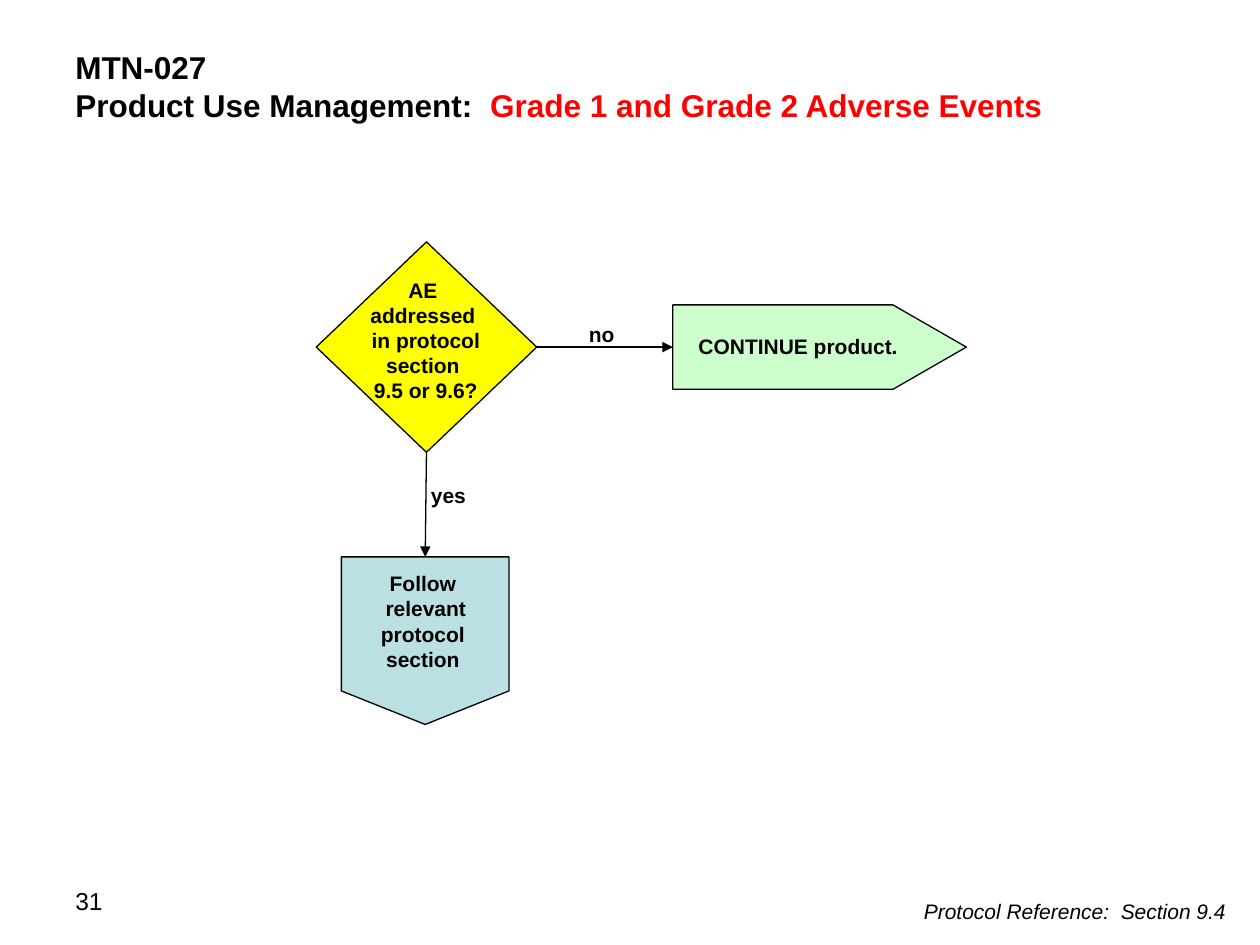
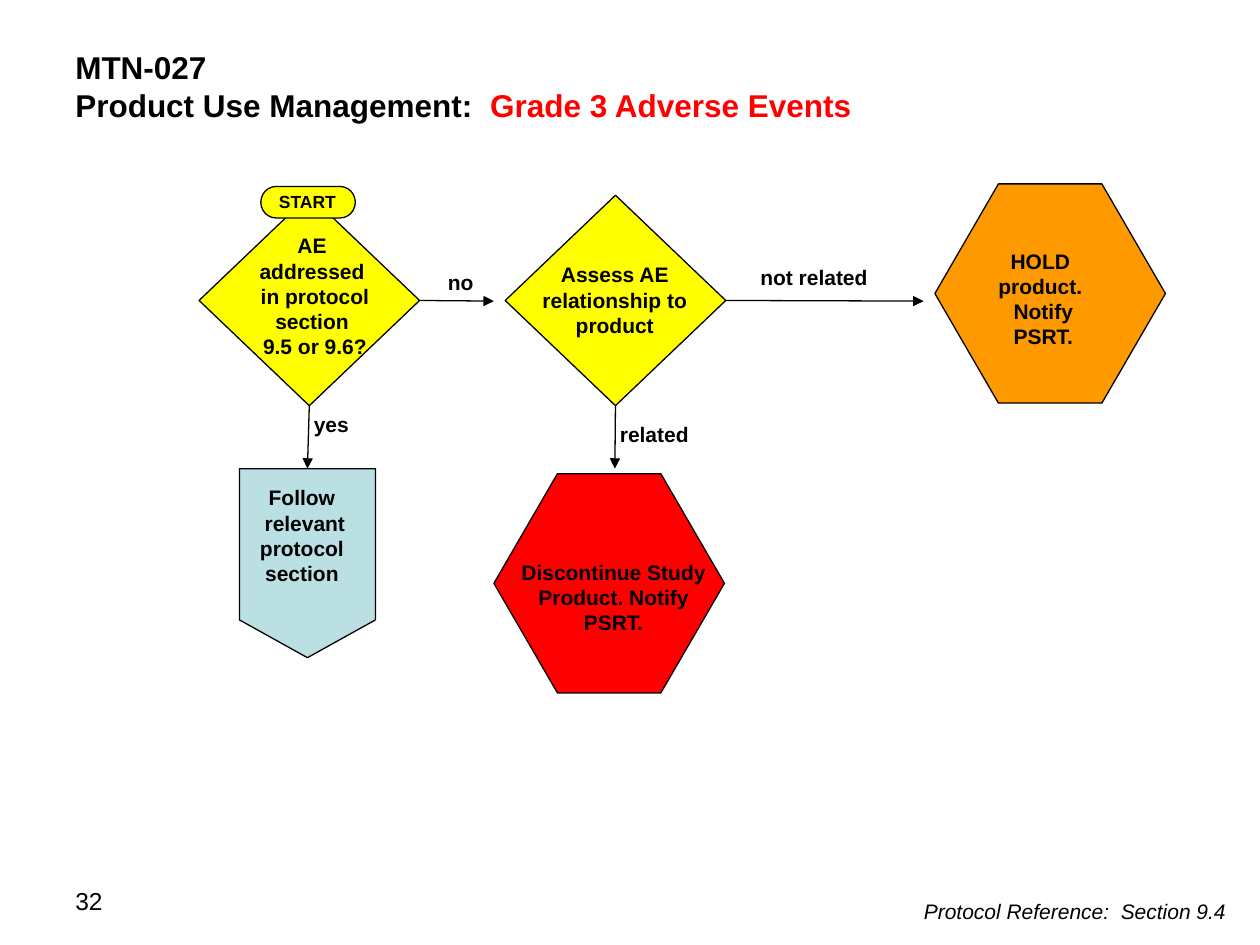
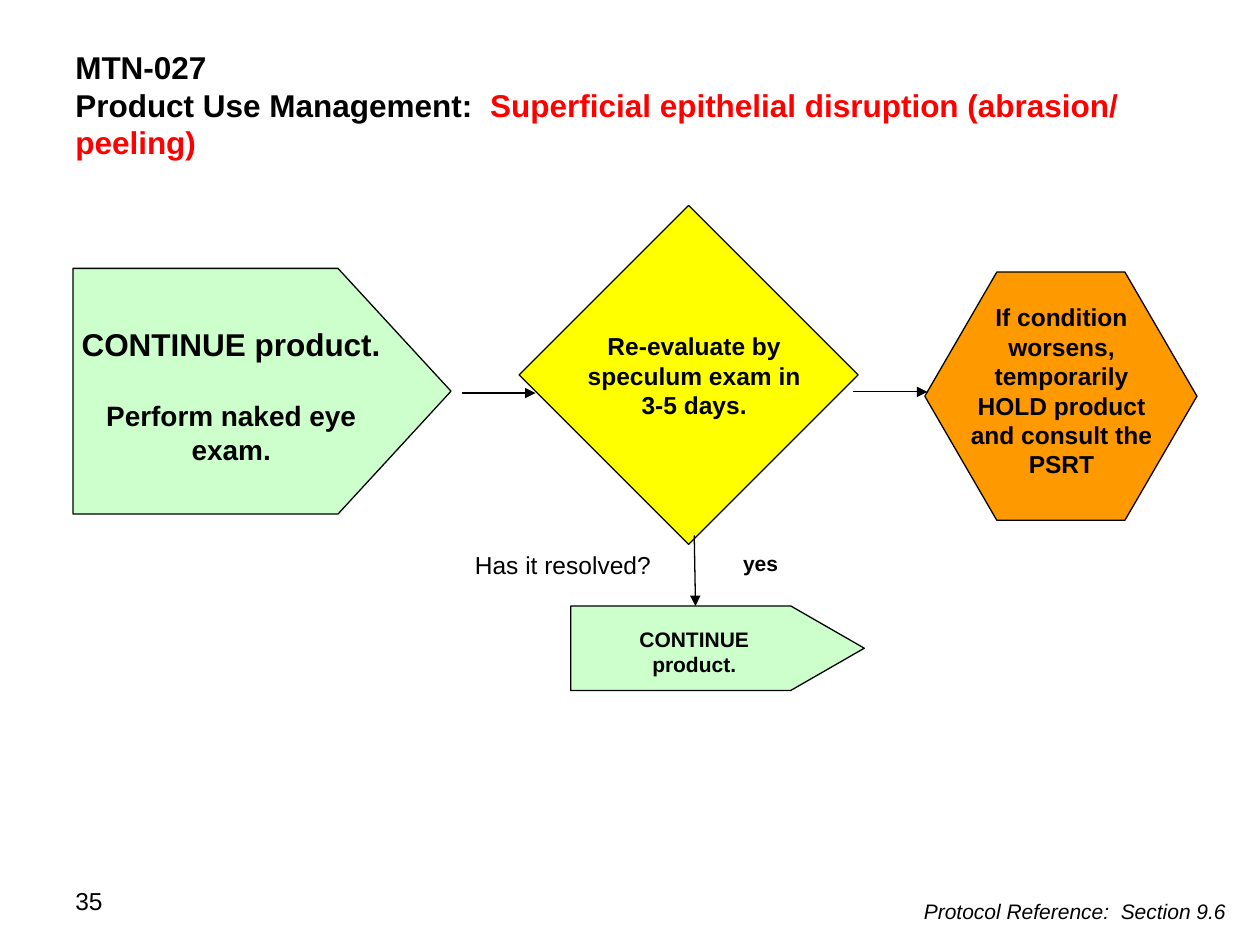
"""Builds three flow chart slides on study product use management."""
import pptx
import pptx.dml.color
import pptx.enum.shapes
import pptx.enum.text
import pptx.oxml
import pptx.oxml.ns
import pptx.util

Inches = pptx.util.Inches
Pt = pptx.util.Pt
MSO = pptx.enum.shapes.MSO_SHAPE
ALIGN = pptx.enum.text.PP_ALIGN

BLACK, RED = "000000", "FF0000"
TOP, LEFT, BOTTOM, RIGHT = range(4)

KINDS = {
    "ask": (MSO.DIAMOND, "FFFF00", None),
    "start": (MSO.FLOWCHART_TERMINATOR, "FFFF00", None),
    "go": (MSO.PENTAGON, "CCFFCC", 0.87),
    "go big": (MSO.PENTAGON, "CCFFCC", 0.46),
    "follow": (MSO.FLOWCHART_OFFPAGE_CONNECTOR, "BBE0E3", None),
    "hold": (MSO.HEXAGON, "FF9900", 0.29),
    "stop": (MSO.HEXAGON, RED, 0.29),
}

BODY = {"size": Pt(12), "bold": True}
MID = {"size": Pt(14), "bold": True}
BIG = {"size": Pt(18), "bold": True}
SMALL = {"size": Pt(10), "bold": True}
PLAIN = {"size": Pt(14)}
NOTE = {"size": Pt(12), "italic": True}

SIDE = {"margin_left": 0}
LOOSE = {"word_wrap": False}

ADDRESSED = ["AE ", "addressed ", "in protocol section ", "9.5 or 9.6?"]
FOLLOW = ["Follow ", "relevant protocol ", "section "]

SLIDES = [
    {
        "page": "31", "section": "9.4",
        "topic": "Grade 1 and Grade 2 Adverse Events",
        "shapes": {
            "addressed": ("ask", 2.51, 1.92, 1.75, 1.67),
            "continue": ("go", 5.34, 2.42, 2.33, 0.67),
            "section": ("follow", 2.71, 4.42, 1.33, 1.33),
        },
        "arrows": [
            (("addressed", RIGHT), ("continue", LEFT)),
            (("addressed", BOTTOM), ("section", TOP)),
        ],
        "texts": [
            ((4.29, 2.5, 0.97, 0.3), ["no"], BODY, ALIGN.CENTER, {}),
            ((5.25, 2.6, 2.17, 0.3), ["CONTINUE product."], BODY, ALIGN.CENTER, {}),
            ((2.63, 2.15, 1.5, 1.11), ADDRESSED, BODY, ALIGN.CENTER, {}),
            ((3.42, 3.78, 2.83, 0.3), ["yes"], BODY, ALIGN.LEFT, SIDE),
            ((2.63, 4.48, 1.5, 0.91), FOLLOW, BODY, ALIGN.CENTER, {}),
        ],
    },
    {
        "page": "32", "section": "9.4",
        "topic": "Grade 3 Adverse Events",
        "shapes": {
            "hold": ("hold", 7.42, 1.46, 1.83, 1.74),
            "stop": ("stop", 3.92, 3.76, 1.83, 1.74),
            "addressed": ("ask", 1.58, 1.55, 1.75, 1.67),
            "section": ("follow", 1.9, 3.72, 1.08, 1.5),
            "assess": ("ask", 4.01, 1.55, 1.75, 1.67),
            "start": ("start", 2.07, 1.48, 0.75, 0.25),
        },
        "arrows": [
            (("addressed", BOTTOM), ("section", TOP)),
            (("addressed", RIGHT), (3.92, 2.39)),
            (("assess", RIGHT), (7.33, 2.39)),
            (("assess", BOTTOM), (4.88, 3.72)),
        ],
        "texts": [
            ((4.01, 4.39, 1.72, 0.71), ["Discontinue Study Product. Notify PSRT."],
             BODY, ALIGN.CENTER, {}),
            ((1.75, 1.8, 1.5, 1.11), ADDRESSED, BODY, ALIGN.CENTER, {}),
            ((2.49, 3.22, 0.58, 0.3), ["yes"], BODY, ALIGN.LEFT, SIDE),
            ((1.67, 3.8, 1.5, 0.91), FOLLOW, BODY, ALIGN.CENTER, {}),
            ((4.13, 2.03, 1.5, 0.7), ["Assess AE relationship to product"],
             BODY, ALIGN.CENTER, {}),
            ((3.33, 2.09, 0.75, 0.3), ["no"], BODY, ALIGN.CENTER, SIDE),
            ((5.67, 2.05, 1.58, 0.3), ["not related"], BODY, ALIGN.CENTER, {}),
            ((4.92, 3.3, 0.67, 0.3), ["related"], BODY, ALIGN.LEFT, SIDE),
            ((2.11, 1.47, 0.66, 0.27), ["START"], SMALL, ALIGN.CENTER, {}),
            ((7.42, 1.92, 1.72, 0.91), ["HOLD ", "product. ", "Notify", "PSRT."],
             BODY, ALIGN.CENTER, {}),
        ],
    },
    {
        "page": "35", "section": "9.6",
        "topic": "Superficial epithelial disruption (abrasion/ peeling)",
        "shapes": {
            "exam": ("go big", 0.58, 2.13, 3, 1.95),
            "hold": ("hold", 7.34, 2.16, 2.16, 1.97),
            "check": ("ask", 4.12, 1.63, 2.69, 2.69),
            "continue": ("go", 4.53, 4.81, 2.33, 0.67),
        },
        "arrows": [
            ((3.67, 3.12), (4.25, 3.12)),
            ((6.77, 3.11), (7.36, 3.11)),
            ((5.51, 4.25), (5.52, 4.81)),
        ],
        "texts": [
            ((0.5, 2.53, 2.67, 1.25),
             ["CONTINUE product.",
              ("Perform naked eye exam.", {"size": Pt(16)}, {"space_before": Pt(20.7)})],
             BIG, ALIGN.CENTER, {}),
            ((7.55, 2.35, 1.75, 1.51),
             ["If condition worsens, temporarily HOLD product and consult the PSRT"],
             MID, ALIGN.CENTER, {}),
            ((4.53, 2.58, 1.96, 1.04), ["Re-evaluate by speculum exam in 3-5 days."],
             MID, ALIGN.CENTER, {}),
            ((5.71, 4.32, 0.75, 0.3), ["yes"], BODY, ALIGN.CENTER, SIDE),
            ((4.65, 4.92, 1.72, 0.51), ["CONTINUE", "product."], BODY, ALIGN.CENTER, {}),
            ((3.67, 4.32, 1.61, 0.34), ["Has it resolved?"], PLAIN, ALIGN.LEFT, LOOSE),
        ],
    },
]


def apply(thing, form):
    for key, val in form.items():
        setattr(thing, key, val)


def paint(part, hue):
    part.rgb = pptx.dml.color.RGBColor.from_string(hue)


def add_run(para, text, font, hue=BLACK):
    run = para.add_run()
    run.text = text
    apply(run.font, {"name": "Arial", **font})
    paint(run.font.color, hue)


def add_text(slide, box, lines, font, align=ALIGN.LEFT, frame={}):
    body = slide.shapes.add_textbox(*map(Inches, box)).text_frame
    apply(body, {"word_wrap": True, **frame})
    for num, line in enumerate(lines):
        para = body.paragraphs[0] if num == 0 else body.add_paragraph()
        text, extra, gap = (line, {}, {}) if isinstance(line, str) else line
        apply(para, {"alignment": align, **gap})
        add_run(para, text, {**font, **extra})
    return body


def outline(line):
    line.width = Pt(0.75)
    line.fill.solid()
    paint(line.fill.fore_color, BLACK)


def add_node(slide, kind, *box):
    form, hue, bend = KINDS[kind]
    node = slide.shapes.add_shape(form, *map(Inches, box))
    node.shadow.inherit = False
    node.fill.solid()
    paint(node.fill.fore_color, hue)
    outline(node.line)
    if bend is not None:
        node.adjustments[0] = bend
    return node


def add_arrow(slide, nodes, head, tail):
    ends = [(0, 0) if end[0] in nodes else end for end in (head, tail)]
    link = slide.shapes.add_connector(
        pptx.enum.shapes.MSO_CONNECTOR.STRAIGHT, *map(Inches, ends[0] + ends[1]))
    for end, join in ((head, link.begin_connect), (tail, link.end_connect)):
        if end[0] in nodes:
            join(nodes[end[0]], end[1])
    outline(link.line)
    tip = pptx.oxml.parse_xml(
        f'<a:tailEnd {pptx.oxml.ns.nsdecls("a")} type="triangle"/>')
    link.line._get_or_add_ln().append(tip)
    link._element.spPr.append(
        pptx.oxml.parse_xml(f'<a:effectLst {pptx.oxml.ns.nsdecls("a")}/>'))


def add_frame(slide, page, topic, section):
    title = add_text(slide, (0.5, 0.33, 9, 0.71),
                     ["MTN-027", "Product Use Management:  "], BIG)
    add_run(title.paragraphs[1], topic, BIG, RED)
    add_text(slide, (0.5, 6.98, 2.33, 0.52), [page], PLAIN)
    add_text(slide, (6.08, 7.08, 3.75, 0.3),
             [f"Protocol Reference:  Section {section}"], NOTE, ALIGN.RIGHT)


def main():
    deck = pptx.Presentation()
    apply(deck, {"slide_width": Inches(10), "slide_height": Inches(7.5)})
    for item in SLIDES:
        slide = deck.slides.add_slide(deck.slide_layouts[6])
        add_frame(slide, item["page"], item["topic"], item["section"])
        nodes = {name: add_node(slide, *node) for name, node in item["shapes"].items()}
        for head, tail in item["arrows"]:
            add_arrow(slide, nodes, head, tail)
        for text in item["texts"]:
            add_text(slide, *text)
    deck.save("out.pptx")


if __name__ == "__main__":
    main()
